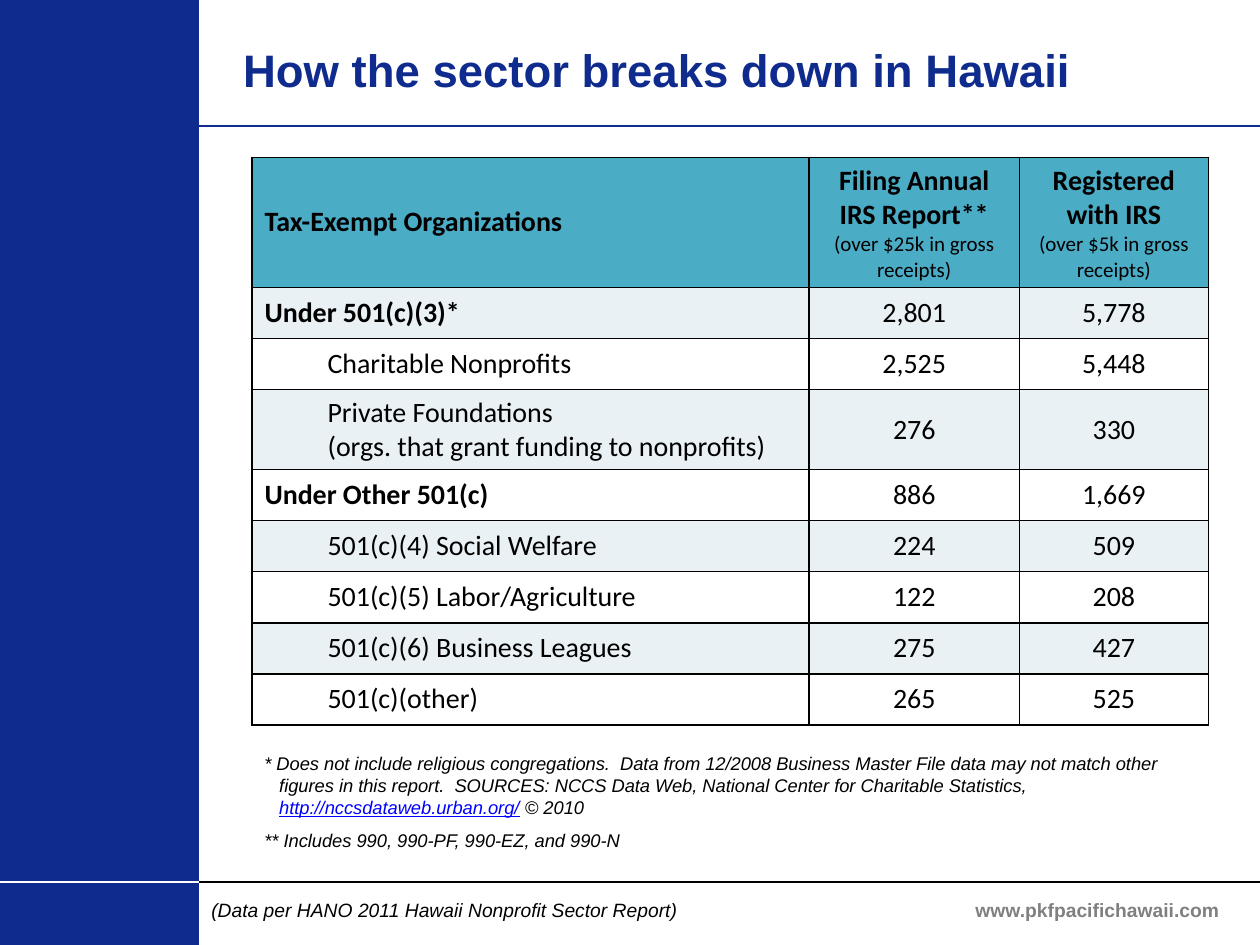
from dataclasses import dataclass
from typing import Optional

from lxml import etree
from pptx import Presentation
from pptx.dml.color import RGBColor
from pptx.enum.shapes import MSO_CONNECTOR, MSO_SHAPE
from pptx.enum.text import MSO_ANCHOR, PP_ALIGN
from pptx.oxml.ns import qn
from pptx.util import Cm, Pt

LEFT, CENTER = PP_ALIGN.LEFT, PP_ALIGN.CENTER
TOP, MIDDLE = MSO_ANCHOR.TOP, MSO_ANCHOR.MIDDLE
STRAIGHT, RECT = MSO_CONNECTOR.STRAIGHT, MSO_SHAPE.RECTANGLE

NAVY, TEAL, PALE = "0E2B8D", "4BACC6", "E9F1F5"
BLACK, WHITE, GRAY, BLUE = "000000", "FFFFFF", "808080", "0000FF"
SLIDE_W, SLIDE_H = 25.4, 19.05
BAR_W, HEAD_Y, FOOT_Y = 4.01, 2.54, 17.78


@dataclass
class Para:
    text: str
    size: float
    bold: bool = False
    italic: bool = False
    color: str = BLACK
    font: str = "Arial"
    align: PP_ALIGN = LEFT
    margin: float = 0
    hanging: float = 0
    before: float = 0
    link: Optional[str] = None


@dataclass
class Box:
    x: float
    y: float
    w: float
    h: float
    paras: list[Para]
    anchor: MSO_ANCHOR = TOP


@dataclass
class Line:
    x1: float
    x2: float
    y: float
    color: str


@dataclass
class Row:
    label: list[str]
    filing: str
    registered: str
    total: bool = False
    height: float = 1.03


def rgb(color: str) -> RGBColor:
    return RGBColor.from_string(color)


def write(tf, paras: list[Para]) -> None:
    for i, para in enumerate(paras):
        p = tf.paragraphs[0] if i == 0 else tf.add_paragraph()
        p.alignment = para.align
        if para.before:
            p.space_before = Pt(para.before)
        if para.margin:
            pPr = p._p.get_or_add_pPr()
            pPr.set("marL", str(Cm(para.margin)))
            pPr.set("indent", str(-Cm(para.hanging)))
        f = p.font
        f.name, f.size = para.font, Pt(para.size)
        f.bold, f.italic = para.bold, para.italic
        f.color.rgb = rgb(para.color)
        parts = para.text.partition(para.link) if para.link else [para.text]
        for part in parts:
            r = p.add_run()
            r.text = part
            if part == para.link:
                r.font.color.rgb = rgb(BLUE)
                r.font.underline = True


def add_box(s, box: Box) -> None:
    sp = s.shapes.add_textbox(Cm(box.x), Cm(box.y), Cm(box.w), Cm(box.h))
    tf = sp.text_frame
    tf.word_wrap = True
    tf.vertical_anchor = box.anchor
    write(tf, box.paras)


def add_line(s, line: Line) -> None:
    c = s.shapes.add_connector(STRAIGHT, Cm(line.x1), Cm(line.y), Cm(line.x2), Cm(line.y))
    c.line.color.rgb = rgb(line.color)
    c.line.width = Pt(1)
    etree.SubElement(c._element.spPr, qn("a:effectLst"))


def fill_cell(cell, paras: list[Para], color: str) -> None:
    cell.fill.solid()
    cell.fill.fore_color.rgb = rgb(color)
    cell.vertical_anchor = MIDDLE
    write(cell.text_frame, paras)
    tcPr = cell._tc.get_or_add_tcPr()
    for i, side in enumerate(("lnL", "lnR", "lnT", "lnB")):
        ln = etree.Element(qn(f"a:{side}"), w=str(Pt(1)))
        fill = etree.SubElement(ln, qn("a:solidFill"))
        etree.SubElement(fill, qn("a:srgbClr"), val=BLACK)
        tcPr.insert(i, ln)


def cell_para(text: str, **kw) -> Para:
    return Para(text, **{"size": 16, "font": "Calibri", **kw})


def heading(title: str, note: str) -> list[Para]:
    return [cell_para(title, bold=True, align=CENTER),
            cell_para(note, size=12, align=CENTER)]


HEADER_H = 2.62
COLS = [11.23, 4.24, 3.81]
HEADINGS = [
    [cell_para("Tax-Exempt Organizations", bold=True)],
    heading("Filing Annual IRS Report**", "(over $25k in gross receipts)"),
    heading("Registered with IRS", "(over $5k in gross receipts)"),
]
ROWS = [
    Row(["Under 501(c)(3)*"], "2,801", "5,778", total=True),
    Row(["Charitable Nonprofits"], "2,525", "5,448"),
    Row(["Private Foundations", "(orgs. that grant funding to nonprofits)"],
        "276", "330", height=1.6),
    Row(["Under Other 501(c)"], "886", "1,669", total=True),
    Row(["501(c)(4) Social Welfare"], "224", "509"),
    Row(["501(c)(5) Labor/Agriculture"], "122", "208"),
    Row(["501(c)(6) Business Leagues"], "275", "427"),
    Row(["501(c)(other)"], "265", "525"),
]
LINES = [
    Line(0, SLIDE_W, FOOT_Y, BLACK),
    Line(BAR_W, 0, FOOT_Y, WHITE),
    Line(BAR_W, SLIDE_W, HEAD_Y, NAVY),
]
NOTE = dict(size=10.5, italic=True, margin=0.3, hanging=0.3)
BOXES = [
    Box(4.65, -0.2, 20.32, 3.18,
        [Para("How the sector breaks down in Hawaii", 26, bold=True, color=NAVY)], MIDDLE),
    Box(18.85, 17.83, 6.55, 1.02,
        [Para("www.pkfpacifichawaii.com", 11, bold=True, color=GRAY, align=CENTER)], MIDDLE),
    Box(BAR_W, 17.98, 14.17, 0.74,
        [Para("(Data per HANO 2011 Hawaii Nonprofit Sector Report)", 11, italic=True)]),
    Box(5.08, 15.04, 19.25, 2.26, [
        Para("* Does not include religious congregations.  Data from 12/2008 Business "
             "Master File data may not match other figures in this report.  SOURCES: NCCS "
             "Data Web, National Center for Charitable Statistics, "
             "http://nccsdataweb.urban.org/ © 2010",
             link="http://nccsdataweb.urban.org/", **NOTE),
        Para("** Includes 990, 990-PF, 990-EZ, and 990-N", before=6, **NOTE),
    ]),
]


def add_sector_table(s) -> None:
    heights = [HEADER_H] + [row.height for row in ROWS]
    table = s.shapes.add_table(len(heights), len(COLS), Cm(5.08), Cm(3.17),
                               Cm(sum(COLS)), Cm(sum(heights))).table
    for col, w in zip(table.columns, COLS):
        col.width = Cm(w)
    for tr, h in zip(table.rows, heights):
        tr.height = Cm(h)
    for j, paras in enumerate(HEADINGS):
        fill_cell(table.cell(0, j), paras, TEAL)
    for i, row in enumerate(ROWS, 1):
        color = PALE if i % 2 else WHITE
        label = [cell_para(t, bold=row.total, margin=0 if row.total else 1.27)
                 for t in row.label]
        fill_cell(table.cell(i, 0), label, color)
        for j, value in enumerate((row.filing, row.registered), 1):
            fill_cell(table.cell(i, j), [cell_para(value, align=CENTER)], color)


def main() -> None:
    prs = Presentation()
    prs.slide_width, prs.slide_height = Cm(SLIDE_W), Cm(SLIDE_H)
    s = prs.slides.add_slide(prs.slide_layouts[6])

    # Side bar and rules
    bar = s.shapes.add_shape(RECT, 0, 0, Cm(BAR_W), Cm(SLIDE_H))
    bar.shadow.inherit = False
    bar.fill.solid()
    bar.fill.fore_color.rgb = rgb(NAVY)
    bar.line.fill.background()
    for line in LINES:
        add_line(s, line)

    # Title, footer and notes
    for box in BOXES:
        add_box(s, box)

    # Table of organizations
    add_sector_table(s)
    prs.save("out.pptx")


if __name__ == "__main__":
    main()
